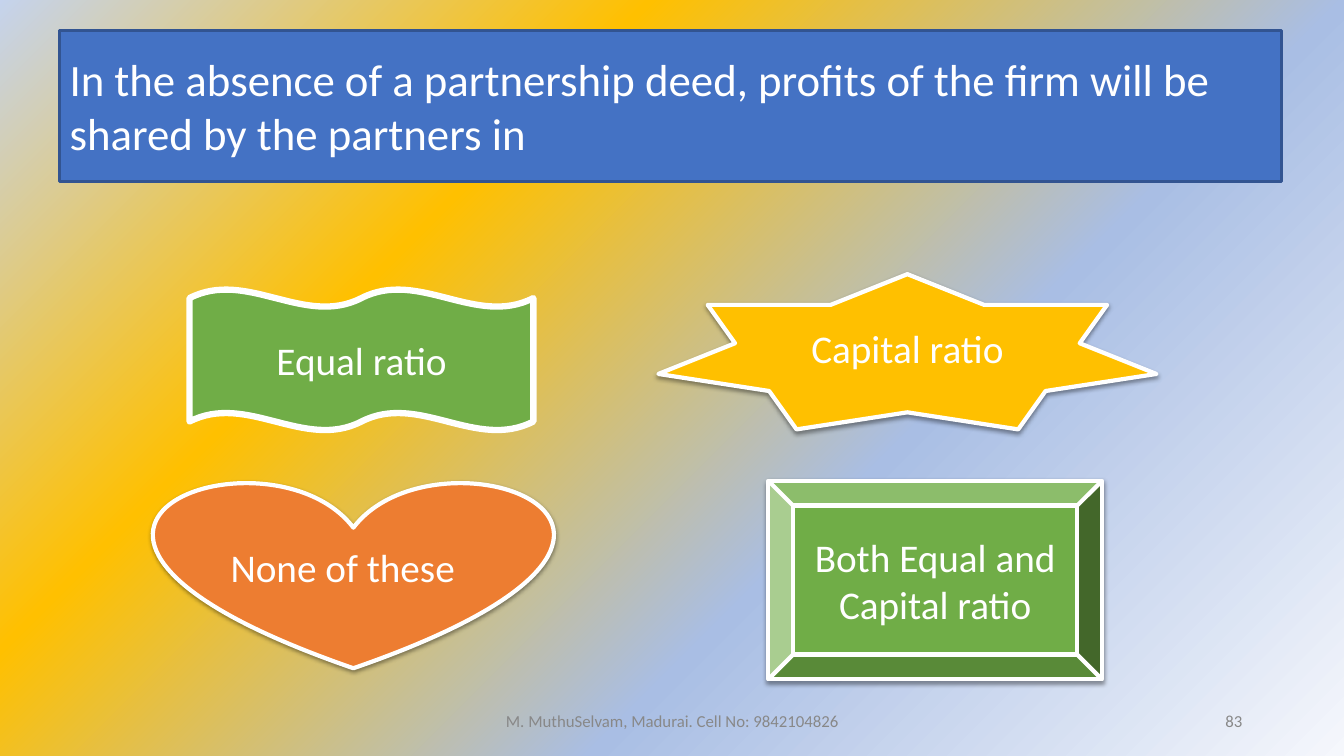
from lxml import etree
from pptx import Presentation
from pptx.dml.color import RGBColor
from pptx.enum.shapes import MSO_SHAPE
from pptx.enum.text import MSO_ANCHOR, MSO_AUTO_SIZE, PP_ALIGN
from pptx.oxml import parse_xml
from pptx.oxml.ns import nsdecls, qn
from pptx.util import Inches, Pt

COLORS = {
    "white": "FFFFFF",
    "blue": "4472C4",
    "dark_blue": "325491",
    "green": "70AD47",
    "gold": "FFC000",
    "orange": "ED7D31",
    "gray": "888888",
}
BACKGROUND_STOPS = [(0, "F5F7FC"), (36, "A9BEE4"), (69, "FFC000"), (100, "C5D3ED")]


def write_text(shape, text, size, color, alignment):
    frame = shape.text_frame
    frame.text = text
    frame_format = {
        "word_wrap": True,
        "auto_size": MSO_AUTO_SIZE.NONE,
        "vertical_anchor": MSO_ANCHOR.MIDDLE,
    }
    for name, value in frame_format.items():
        setattr(frame, name, value)
    paragraph = frame.paragraphs[0]
    paragraph.alignment = alignment
    font = paragraph.runs[0].font
    for name, value in {"name": "Calibri", "size": Pt(size)}.items():
        setattr(font, name, value)
    font.color.rgb = RGBColor.from_string(COLORS[color])


def paint(shape, fill, line, width):
    """Set a solid fill and an outline."""
    shape.fill.solid()
    shape.fill.fore_color.rgb = RGBColor.from_string(COLORS[fill])
    shape.line.color.rgb = RGBColor.from_string(COLORS[line])
    shape.line.width = Pt(width)


presentation = Presentation()
presentation.slide_width = Inches(13.33)
presentation.slide_height = Inches(7.5)
slide = presentation.slides.add_slide(presentation.slide_layouts[5])

# Background gradient, spreading from the bottom right corner
slide.background.fill.solid()
background = slide.element.find(".//" + qn("p:bgPr"))
stops = "".join(
    f'<a:gs pos="{position * 1000}"><a:srgbClr val="{color}"/></a:gs>'
    for position, color in BACKGROUND_STOPS
)
gradient = parse_xml(
    f'<a:gradFill {nsdecls("a")} rotWithShape="1"><a:gsLst>{stops}</a:gsLst>'
    '<a:path path="circle"><a:fillToRect l="100000" t="100000"/></a:path>'
    '<a:tileRect r="-100000" b="-100000"/></a:gradFill>'
)
background.replace(background.find(qn("a:solidFill")), gradient)

# Question on a scroll
question = slide.shapes.title
question_box = {"left": 0.59, "top": 0.3, "width": 12.12, "height": 1.5}
for name, value in question_box.items():
    setattr(question, name, Inches(value))
scroll = etree.SubElement(
    question.element.spPr, qn("a:prstGeom"), prst="horizontalScroll"
)
etree.SubElement(scroll, qn("a:avLst"))
paint(question, "blue", "dark_blue", 2)
write_text(
    question,
    "In the absence of a partnership deed, profits of the firm will be "
    "shared by the partners in",
    32, "white", PP_ALIGN.LEFT,
)

# Answers: text, outline, box, fill, line width, alignment, shadow
answers = [
    ("None of these", MSO_SHAPE.HEART, (1.53, 4.77, 3.95, 1.86),
     "orange", 3, PP_ALIGN.LEFT, True),
    ("Capital ratio", MSO_SHAPE.STAR_7_POINT, (6.53, 2.72, 4.94, 1.54),
     "gold", 3, PP_ALIGN.CENTER, True),
    ("Both Equal and Capital ratio", MSO_SHAPE.BEVEL, (7.62, 4.77, 3.31, 1.97),
     "green", 3, PP_ALIGN.CENTER, True),
    ("Equal ratio", MSO_SHAPE.DOUBLE_WAVE, (1.88, 2.87, 3.41, 1.4),
     "green", 4.5, PP_ALIGN.CENTER, False),
]
for text, outline, box, fill, width, alignment, has_shadow in answers:
    answer = slide.shapes.add_shape(outline, *map(Inches, box))
    paint(answer, fill, "white", width)
    answer.shadow.inherit = False
    if has_shadow:
        effects = answer.element.spPr.find(qn("a:effectLst"))
        effects.append(parse_xml(
            f'<a:outerShdw {nsdecls("a")} blurRad="40000" dist="20000" '
            'dir="5400000" rotWithShape="0"><a:srgbClr val="000000">'
            '<a:alpha val="38000"/></a:srgbClr></a:outerShdw>'
        ))
    write_text(answer, text, 28, "white", alignment)

# Footer and slide number
footers = [
    ("M. MuthuSelvam, Madurai. Cell No: 9842104826", 4.42, 4.5, PP_ALIGN.CENTER),
    ("83", 9.42, 3, PP_ALIGN.RIGHT),
]
for text, left, width, alignment in footers:
    footer = slide.shapes.add_textbox(
        Inches(left), Inches(6.95), Inches(width), Inches(0.4)
    )
    write_text(footer, text, 12, "gray", alignment)

presentation.save("out.pptx")
